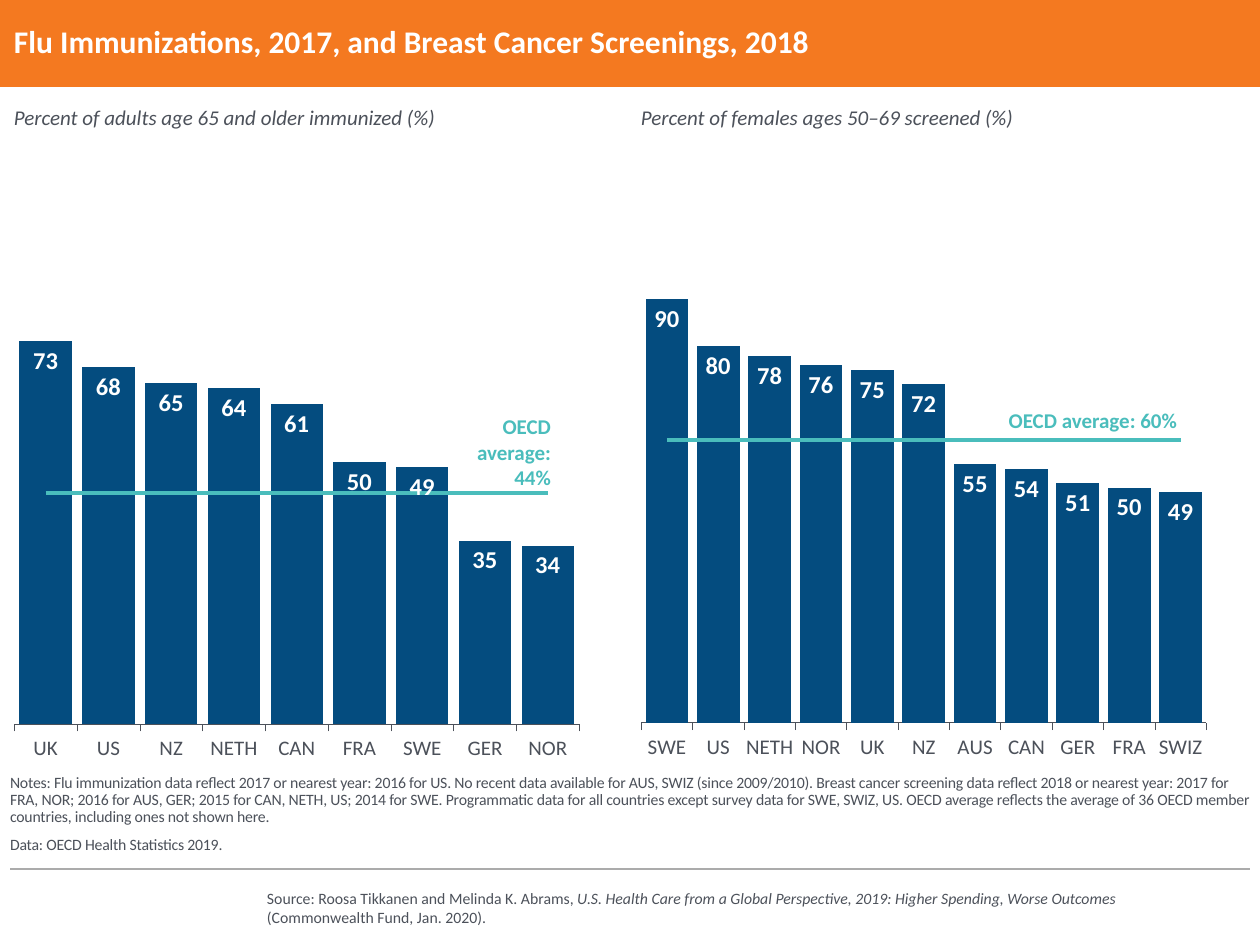
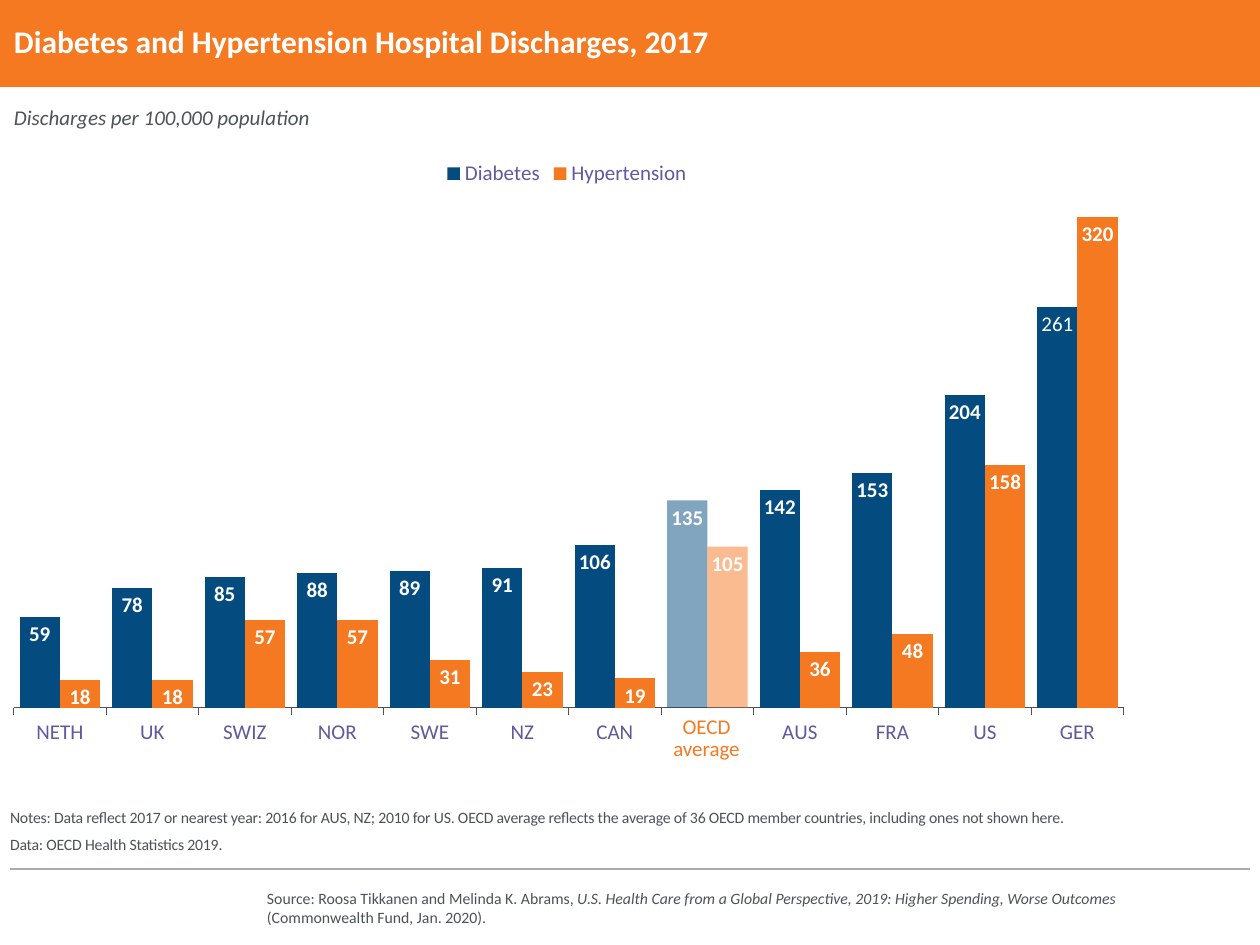
from lxml import etree
from pptx import Presentation
from pptx.chart.data import CategoryChartData as Data
from pptx.dml.color import RGBColor as RGB
from pptx.enum.chart import XL_CHART_TYPE as Kind, XL_LABEL_POSITION as Spot
from pptx.enum.chart import XL_LEGEND_POSITION as Side, XL_MARKER_STYLE as Mark
from pptx.enum.chart import XL_TICK_MARK as Tick
from pptx.enum.shapes import MSO_CONNECTOR as Conn, MSO_SHAPE as Shape
from pptx.enum.text import MSO_ANCHOR as Anchor, PP_ALIGN as Align
from pptx.oxml import parse_xml
from pptx.oxml.ns import nsdecls, qn
from pptx.util import Pt

PX = 914400 / 126
ORANGE = RGB(0xF4, 0x79, 0x20)
NAVY = RGB(0x04, 0x4C, 0x7F)
TEAL = RGB(0x4A, 0xBD, 0xBC)
GREY = RGB(0x4C, 0x51, 0x5A)
PURPLE = RGB(0x5F, 0x5A, 0x9D)
RULE = RGB(0xAB, 0xAB, 0xAB)
WHITE = RGB(0xFF, 0xFF, 0xFF)
FONT = "Calibri"


def text(slide, at, lines, size, color=GREY, bold=False, ital=False, align=Align.LEFT,
         anchor=Anchor.TOP, pad=0, space=1.0, after=0, track=0, wrap=True):
    """Add a text box; each line is a list of runs, every second one in italics."""
    box = slide.shapes.add_textbox(*[int(n * PX) for n in at])
    frame = box.text_frame
    frame.word_wrap = wrap
    frame.vertical_anchor = anchor
    frame.margin_left = frame.margin_right = int(2 * pad * PX)
    frame.margin_top = frame.margin_bottom = int(pad * PX)
    for n, runs in enumerate(lines):
        para = frame.add_paragraph() if n else frame.paragraphs[0]
        para.alignment = align
        para.line_spacing = space
        para.space_after = Pt(after)
        for k, words in enumerate(runs):
            run = para.add_run()
            run.text = words
            font = run.font
            font.name, font.size, font.bold = FONT, Pt(size), bold
            font.italic = ital or k % 2 == 1
            font.color.rgb = color
            if track:
                run._r.get_or_add_rPr().set("spc", str(track))
    return box


def chart(slide, at, cats, rows, top, gap, size, color, plot):
    """Add a column chart with labels inside the bars and no value axis."""
    data = Data(number_format="#,##0")
    data.categories = cats
    for name, vals in rows:
        data.add_series(name, vals)
    place = [int(n * PX) for n in at]
    obj = slide.shapes.add_chart(Kind.COLUMN_CLUSTERED, *place, data).chart
    obj.has_title = obj.has_legend = False
    obj.font.name, obj.font.size, obj.font.color.rgb = FONT, Pt(11), color

    val = obj.value_axis
    val.visible = val.has_major_gridlines = False
    val.minimum_scale, val.maximum_scale = 0, top
    cat = obj.category_axis
    cat.major_tick_mark, cat.minor_tick_mark = Tick.OUTSIDE, Tick.NONE
    cat.format.line.color.rgb, cat.format.line.width = GREY, Pt(0.3)
    font = cat.tick_labels.font
    font.name, font.size, font.color.rgb = FONT, Pt(12), color

    bars = obj.plots[0]
    bars.gap_width, bars.overlap, bars.vary_by_categories = gap, 0, False
    for row, fill in zip(bars.series, (NAVY, ORANGE)):
        row.invert_if_negative = False
        row.format.fill.solid()
        row.format.fill.fore_color.rgb = fill
        tags = row.data_labels
        tags.show_value, tags.position = True, Spot.INSIDE_END
        tags.number_format, tags.number_format_is_linked = "#,##0", False
        font = tags.font
        font.name, font.size, font.bold, font.color.rgb = FONT, Pt(size), True, WHITE

    # Fixed inner plot area
    area = obj._chartSpace.find(".//" + qn("c:plotArea"))
    for old in area.findall(qn("c:layout")):
        area.remove(old)
    x, y, w, h = plot
    area.insert(0, parse_xml(
        f'<c:layout {nsdecls("c")}><c:manualLayout><c:layoutTarget val="inner"/>'
        f'<c:xMode val="edge"/><c:yMode val="edge"/><c:x val="{x}"/><c:y val="{y}"/>'
        f'<c:w val="{w}"/><c:h val="{h}"/></c:manualLayout></c:layout>'))
    return obj


deck = Presentation()
deck.slide_width, deck.slide_height = int(1260 * PX), int(945 * PX)

SOURCE = ["Source: Roosa Tikkanen and Melinda K. Abrams, ",
          "U.S. Health Care from a Global Perspective, 2019: Higher Spending, Worse Outcomes ",
          "(Commonwealth Fund, Jan. 2020)."]
PAGES = [
    ("Flu Immunizations, 2017, and Breast Cancer Screenings, 2018", 767,
     "Notes: Flu immunization data reflect 2017 or nearest year: 2016 for US. No recent data "
     "available for AUS, SWIZ (since 2009/2010). Breast cancer screening data reflect 2018 or "
     "nearest year: 2017 for FRA, NOR; 2016 for AUS, GER; 2015 for CAN, NETH, US; 2014 for SWE. "
     "Programmatic data for all countries except survey data for SWE, SWIZ, US. OECD average "
     "reflects the average of 36 OECD member countries, including ones not shown here.",
     ["Percent of adults age 65 and older immunized (%)",
      "Percent of females ages 50–69 screened (%)"]),
    ("Diabetes and Hypertension Hospital Discharges, 2017", 785,
     "Notes: Data reflect 2017 or nearest year: 2016 for AUS, NZ; 2010 for US. OECD average "
     "reflects the average of 36 OECD member countries, including ones not shown here.",
     ["Discharges per 100,000 population"]),
]

# Shared parts: band, title, captions, notes, rule and source
slides = []
for title, y, notes, heads in PAGES:
    slide = deck.slides.add_slide(deck.slide_layouts[6])
    slides.append(slide)
    band = slide.shapes.add_shape(Shape.RECTANGLE, 0, 0, deck.slide_width, int(87 * PX))
    band.shadow.inherit = False
    band.fill.solid()
    band.fill.fore_color.rgb = ORANGE
    band.line.fill.background()
    rule = slide.shapes.add_connector(
        Conn.STRAIGHT, *[int(n * PX) for n in (1250, 869, 10, 869)])
    rule.line.color.rgb, rule.line.width = RULE, Pt(0.75)
    etree.SubElement(rule._element.spPr, qn("a:effectLst"))
    text(slide, (255, 883, 951, 51), [SOURCE], 9, pad=6)
    text(slide, (14, 0, 1240, 87), [[title]], 18, WHITE, bold=True,
         anchor=Anchor.MIDDLE, space=0.9)
    text(slide, (10, y, 1240, 854 - y), [[notes], ["Data: OECD Health Statistics 2019."]], 9,
         anchor=Anchor.BOTTOM, space=0.9, after=6, track=-10)
    for x, head in zip((14, 641), heads):
        text(slide, (x, 105, 606, 25), [[head]], 12, ital=True)

# Slide 1: two charts, each with an average line
PAIR = [
    ((14, 249, 567, 512), 80, 44,
     {"UK": 73, "US": 68, "NZ": 65, "NETH": 64, "CAN": 61, "FRA": 50, "SWE": 49,
      "GER": 35, "NOR": 34},
     (460, 414, 91, 77)),
    ((641, 190, 567, 570), 100, 60,
     {"SWE": 90, "US": 80, "NETH": 78, "NOR": 76, "UK": 75, "NZ": 72, "AUS": 55,
      "CAN": 54, "GER": 51, "FRA": 50, "SWIZ": 49},
     (956, 408, 221, 25)),
]
for at, top, mean, vals, spot in PAIR:
    rows = [("Series 1", vals.values()), ("Series 2", [mean] * len(vals))]
    obj = chart(slides[0], at, list(vals), rows, top, 20, 14, GREY, (0, 0.11, 0.997, 0.83))

    # Turn the second series into a line on the same axes
    bar = obj._chartSpace.find(".//" + qn("c:barChart"))
    row = bar.findall(qn("c:ser"))[1]
    for name in ("c:invertIfNegative", "c:spPr", "c:dLbls"):
        for old in row.findall(qn(name)):
            row.remove(old)
    line = parse_xml(f'<c:lineChart {nsdecls("c")}><c:grouping val="standard"/>'
                     '<c:varyColors val="0"/></c:lineChart>')
    line.append(row)
    etree.SubElement(line, qn("c:marker")).set("val", "1")
    for axis in bar.findall(qn("c:axId")):
        etree.SubElement(line, qn("c:axId")).set("val", axis.get("val"))
    bar.addnext(line)
    mid = obj.plots[1].series[0]
    mid.smooth = False
    mid.marker.style = Mark.NONE
    mid.format.line.color.rgb, mid.format.line.width = TEAL, Pt(2.25)
    text(slides[0], spot, [[f"OECD average: {mean}%"]], 12, TEAL, bold=True, align=Align.RIGHT)

# Slide 2: discharges for two conditions
CATS = ["NETH", "UK", "SWIZ", "NOR", "SWE", "NZ", "CAN", "OECD", "AUS", "FRA", "US", "GER"]
ROWS = [("Diabetes", [59, 78, 85, 88, 89, 91, 106, 135, 142, 153, 204, 261]),
        ("Hypertension", [18, 18, 57, 57, 31, 23, 19, 105, 36, 48, 158, 320])]
obj = chart(slides[1], (0, 147, 1134, 630), CATS, ROWS, 350, 30, 12, PURPLE,
            (0.012, 0.038, 0.979, 0.852))
obj.has_legend = True
key = obj.legend
key.position, key.include_in_layout = Side.TOP, False
key.font.name, key.font.size, key.font.color.rgb = FONT, Pt(12), PURPLE

# Half-clear bars for the average
both = obj.plots[0].series
for row, fill in zip(both, (NAVY, ORANGE)):
    ink = row.points[CATS.index("OECD")].format.fill
    ink.solid()
    ink.fore_color.rgb = fill
    tint = row._element.xpath("c:dPt//a:srgbClr")[0]
    etree.SubElement(tint, qn("a:alpha")).set("val", "50000")

# The highest diabetes label is not bold
tag = both[0].points[CATS.index("GER")].data_label
font = tag.font
font.name, font.size, font.bold, font.color.rgb = FONT, Pt(12), False, WHITE
tag.position = Spot.INSIDE_END

# Two-line axis label for the average
box = text(slides[1], (672, 716, 69, 45), [["OECD"], ["average"]], 12, ORANGE,
           align=Align.CENTER, space=0.9, wrap=False)
box.fill.solid()
box.fill.fore_color.rgb = WHITE

deck.save("out.pptx")
